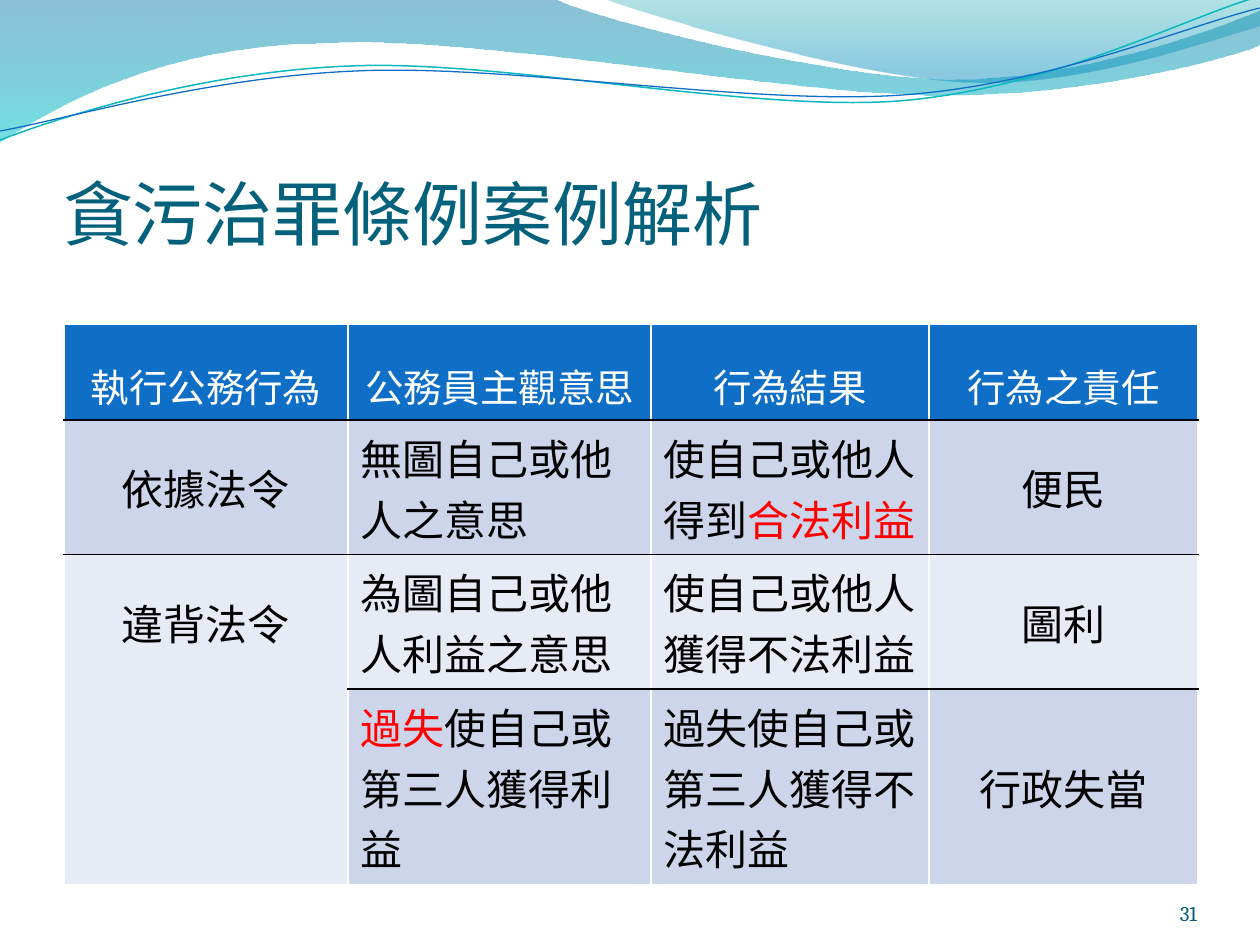
from lxml.etree import SubElement
from pptx import Presentation
from pptx.dml.color import RGBColor
from pptx.enum.text import MSO_ANCHOR, PP_ALIGN
from pptx.oxml import parse_xml
from pptx.oxml.ns import nsdecls, qn
from pptx.util import Pt

SCALE = 914400 / 126
CJK = "Noto Sans CJK SC"
COLORS = {
    "title": "04617B", "number": "045D75", "header": "0F6FC6",
    "band_dark": "CCD5EA", "band_light": "E7EBF5",
    "white": "FFFFFF", "black": "000000", "red": "FF0000",
    "deep": "0074A1", "turquoise": "00C6CF", "teal": "00A1A9",
    "sky": "008BBF", "teal_line": "0AB8BF", "blue_line": "0F6FC6",
}
BROAD_WAVE = [(0, 0), (554, -1), (600, 21, 837, 79, 955, 79),
              (1075, 79, 1207, 33, 1260, 11), (1261, 45),
              (1239, 55, 1096, 96, 940, 95), (784, 95, 481, 35, 324, 43),
              (163, 45, 58, 105, -1, 142), (0, 0)]
RIGHT_WAVE = [(604, -1), (641, 14, 859, 78, 969, 82),
              (1079, 87, 1211, 40, 1260, 26), (1260, 0), (604, -1)]
TEAL_CURVE = [(0, 140), (60, 117, 199, 72, 349, 66),
              (498, 59, 747, 112, 898, 101), (1050, 89, 1182, 19, 1257, -3)]
BLUE_CURVE = [(0, 131), (59, 121, 207, 77, 357, 71),
              (508, 64, 752, 106, 903, 95), (1053, 84, 1186, 26, 1260, 8)]
COLUMNS = [284, 303, 278, 269]
ROWS = [96, 134, 134, 194]
CASES = [
    ["執行公務行為", "公務員主觀意思", "行為結果", "行為之責任"],
    ["依據法令", "無圖自己或他人之意思", "使自己或他人得到*合法利益", "便民"],
    ["違背法令", "為圖自己或他人利益之意思", "使自己或他人獲得不法利益", "圖利"],
    ["", "*過失*使自己或第三人獲得利益", "過失使自己或第三人獲得不法利益", "行政失當"],
]


def px(length):
    return round(length * SCALE)


def rgb(name):
    return RGBColor.from_string(COLORS[name])


def place(shape, box):
    shape.left, shape.top, shape.width, shape.height = map(px, box)


def style(paragraph, size, color, face=CJK):
    font = paragraph.font
    font.size, font.bold = Pt(size), False
    font.color.rgb = rgb(color)
    font.name = face
    SubElement(paragraph._p.pPr.find(qn("a:defRPr")), qn("a:ea"), typeface=face)


def add_outline(slide, segments, origin, close):
    left, top = origin
    points = [(px(x + left), px(y + top))
              for segment in segments for x, y in zip(segment[::2], segment[1::2])]
    builder = slide.shapes.build_freeform(*points[0])
    builder.add_line_segments(points[1:], close=close)
    outline = builder.convert_to_shape()
    outline.shadow.inherit = False
    legs = iter(list(outline._element.iter(qn("a:lnTo"))))
    for segment in segments[1:]:
        leg = next(legs)
        if len(segment) == 6:
            leg.addprevious(parse_xml(f'<a:cubicBezTo {nsdecls("a")}/>'))
            bend = leg.getprevious()
            for handle in (leg, next(legs), next(legs)):
                bend.append(handle[0])
                handle.getparent().remove(handle)
    return outline


def add_wave(slide, segments, origin, stops):
    wave = add_outline(slide, segments, origin, True)
    wave.line.fill.background()
    wave.fill.gradient()
    wave.fill.gradient_angle = 270
    for stop, (position, color, _) in zip(wave.fill.gradient_stops, stops):
        stop.position = position
        stop.color.rgb = rgb(color)
    for tint, (_, _, opacity) in zip(wave._element.spPr.iter(qn("a:srgbClr")), stops):
        SubElement(tint, qn("a:alpha"), val=str(opacity * 1000))


def add_curve(slide, segments, origin, color, width):
    curve = add_outline(slide, segments, origin, False)
    curve.fill.background()
    curve.line.color.rgb = rgb(color)
    curve.line.width = Pt(width)


def add_banner(slide, origin):
    add_wave(slide, BROAD_WAVE, origin, [(0, "deep", 45), (1, "turquoise", 55)])
    add_wave(slide, RIGHT_WAVE, origin, [(0, "teal", 30), (0.8, "sky", 45)])
    add_curve(slide, TEAL_CURVE, origin, "teal_line", 0.85)
    add_curve(slide, BLUE_CURVE, origin, "blue_line", 0.75)


def add_title(slide, box):
    title = slide.shapes.title
    place(title, box)
    frame = title.text_frame
    frame.text = "貪污治罪條例案例解析"
    frame.margin_left = frame.margin_right = frame.margin_bottom = 0
    frame.vertical_anchor = MSO_ANCHOR.BOTTOM
    frame.paragraphs[0].alignment = PP_ALIGN.LEFT
    style(frame.paragraphs[0], 40, "title")


def set_borders(cell, top, bottom):
    sides = {"L": "white", "R": "white", "T": top, "B": bottom}
    for index, (side, color) in enumerate(sides.items()):
        cell._tc.get_or_add_tcPr().insert(index, parse_xml(
            f'<a:ln{side} {nsdecls("a")} w="12700"><a:solidFill>'
            f'<a:srgbClr val="{COLORS[color]}"/></a:solidFill></a:ln{side}>'))


def fill_cell(cell, text, row, column):
    paragraph = cell.text_frame.paragraphs[0]
    if column in (0, 3) or row == 0:
        paragraph.alignment = PP_ALIGN.CENTER
    if column == 0 or row == 0:
        paragraph.line_spacing = 1.5
    elif column == 3:
        cell.vertical_anchor = MSO_ANCHOR.MIDDLE
    style(paragraph, 24 if row else 22, "black" if row else "white")
    for index, part in enumerate(text.split("*")):
        if part:
            run = paragraph.add_run()
            run.text = part
            if index % 2:
                run.font.color.rgb = rgb("red")


def add_case_table(slide, box):
    table = slide.shapes.add_table(len(ROWS), len(COLUMNS), *map(px, box)).table
    for column, width in zip(table.columns, COLUMNS):
        column.width = px(width)
    for row, height in zip(table.rows, ROWS):
        row.height = px(height)
    table.cell(2, 0).merge(table.cell(3, 0))
    bands = ["header", "band_dark", "band_light", "band_dark"]
    for r, texts in enumerate(CASES):
        for c, text in enumerate(texts):
            cell = table.cell(r, c)
            merged = c == 0 and r >= 2
            cell.fill.solid()
            cell.fill.fore_color.rgb = rgb("band_light" if merged else bands[r])
            set_borders(cell, "white" if r == 0 or cell.is_spanned else "black",
                        "white" if r == 3 or merged else "black")
            if text:
                fill_cell(cell, text, r, c)


def add_page_number(slide, box):
    frame = slide.shapes.add_textbox(*map(px, box)).text_frame
    frame.word_wrap = True
    frame.margin_left = frame.margin_right = frame.margin_top = frame.margin_bottom = 0
    frame.vertical_anchor = MSO_ANCHOR.BOTTOM
    frame.text = "31"
    frame.paragraphs[0].alignment = PP_ALIGN.RIGHT
    style(frame.paragraphs[0], 12, "number", "Cambria")


def main():
    deck = Presentation()
    deck.slide_width, deck.slide_height = px(1260), px(945)
    slide = deck.slides.add_slide(deck.slide_layouts[5])
    add_banner(slide, (0, 0))
    add_title(slide, (63, 98, 1144, 157))
    add_case_table(slide, (64, 324, sum(COLUMNS), sum(ROWS)))
    add_page_number(slide, (1092, 876, 105, 50))
    deck.save("out.pptx")


if __name__ == "__main__":
    main()
